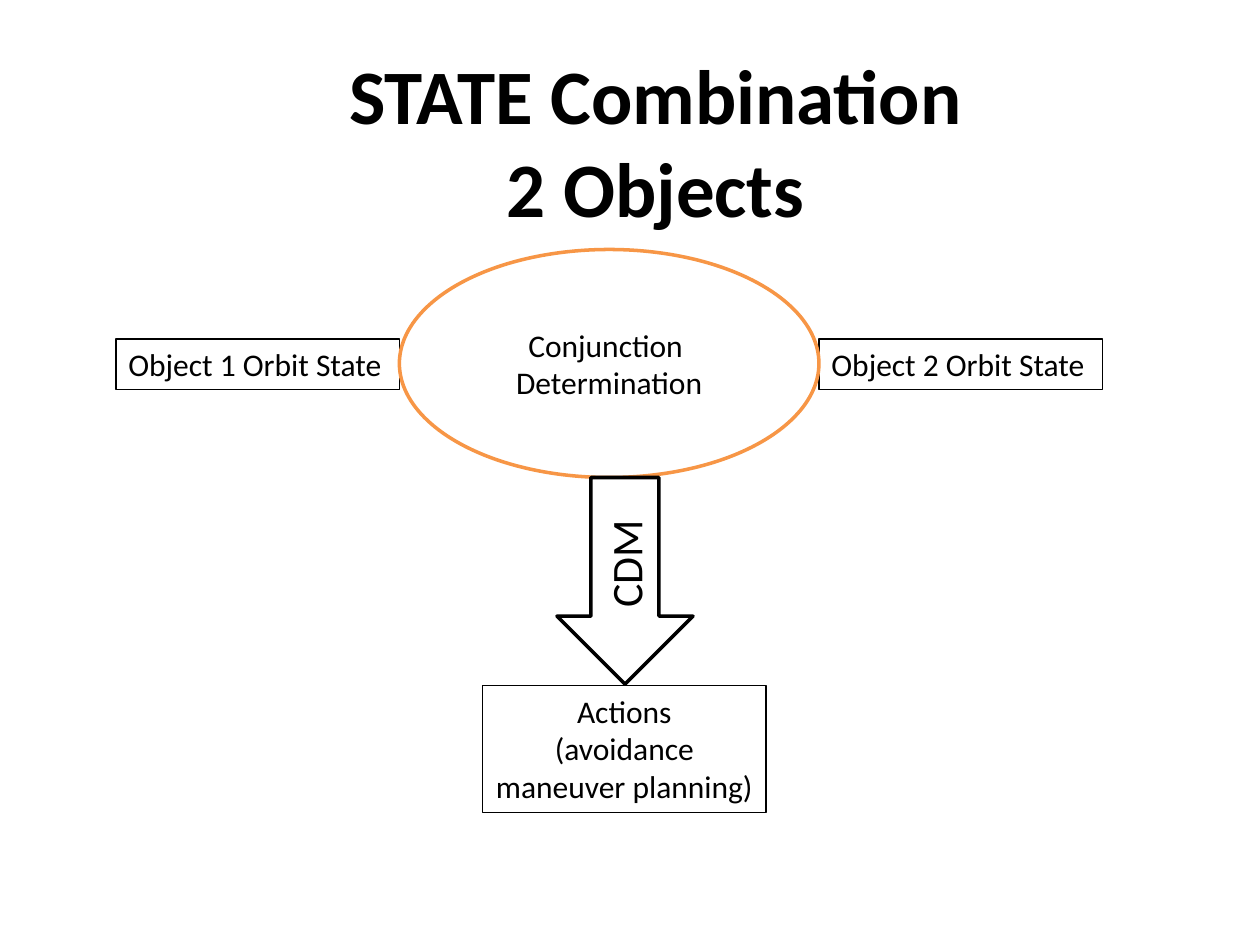
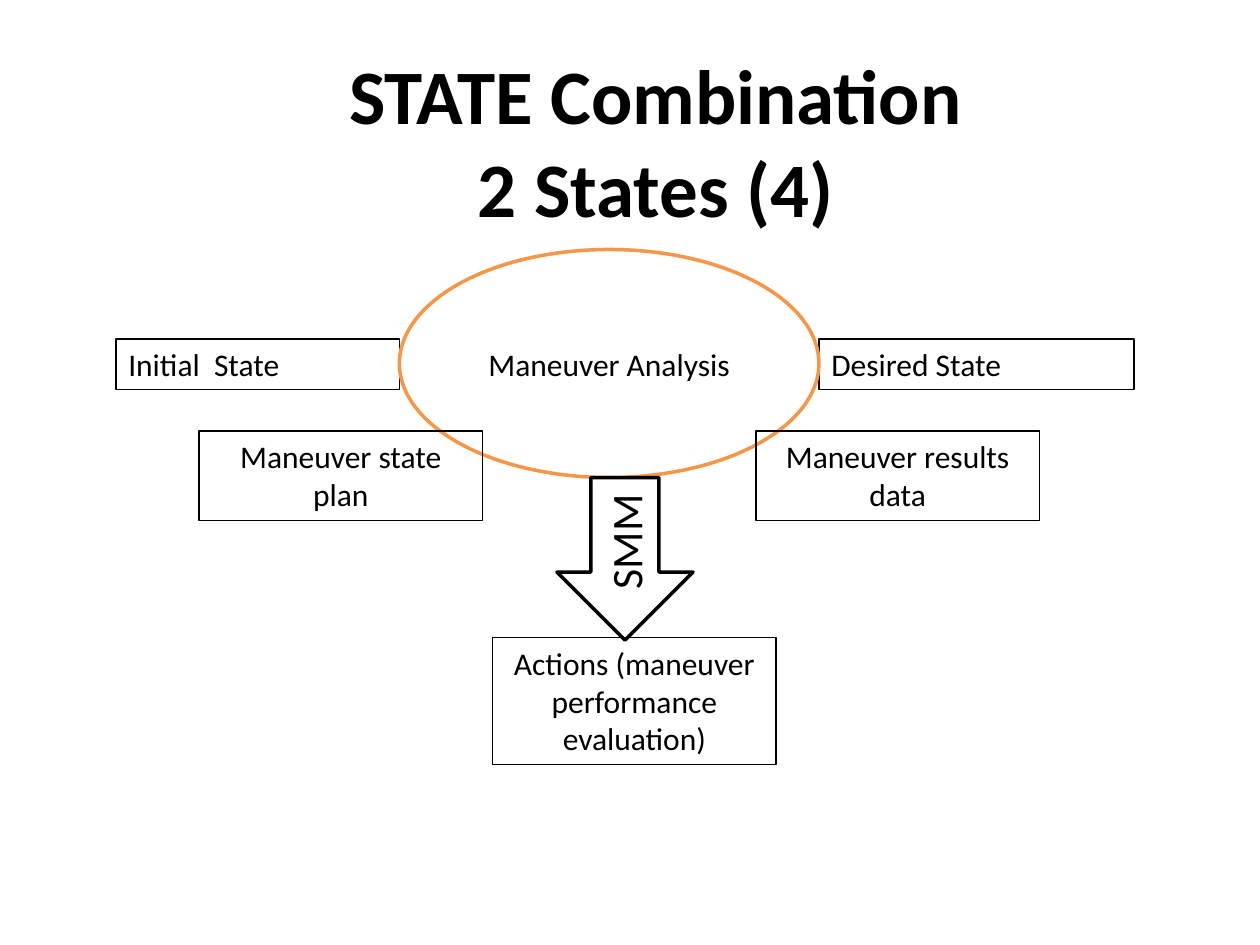
from dataclasses import dataclass

from pptx import Presentation
from pptx.dml.color import RGBColor
from pptx.enum.shapes import MSO_SHAPE
from pptx.enum.text import MSO_ANCHOR, MSO_AUTO_SIZE, PP_ALIGN
from pptx.util import Inches, Pt

RECT, OVAL, ARROW = MSO_SHAPE.RECTANGLE, MSO_SHAPE.OVAL, MSO_SHAPE.DOWN_ARROW
LEFT, CENTER = PP_ALIGN.LEFT, PP_ALIGN.CENTER
TOP, MIDDLE = MSO_ANCHOR.TOP, MSO_ANCHOR.MIDDLE
GROW, FIXED = MSO_AUTO_SIZE.SHAPE_TO_FIT_TEXT, MSO_AUTO_SIZE.NONE


@dataclass(frozen=True)
class Theme:
    font: str = "Calibri"
    ink: RGBColor = RGBColor(0, 0, 0)
    paper: RGBColor = RGBColor(255, 255, 255)
    accent: RGBColor = RGBColor(0xF7, 0x96, 0x46)
    title_size: int = 44
    body_size: int = 18
    arrow_size: int = 25
    thin: float = 0.75
    thick: float = 2


THEME = Theme()

TITLE_AT = (2.33, 0.33, 5.75, 1.58)
OVAL_X, OVAL_Y, OVAL_W, OVAL_H = 3.17, 1.98, 3.33, 1.81
OVAL_RIGHT, OVAL_BOTTOM = OVAL_X + OVAL_W, OVAL_Y + OVAL_H
ARROW_X, ARROW_W = 4.42, 1.08
BOX_W = 2.25
STATE_Y, STATE_H = 2.69, 0.4
DATA_Y, DATA_H = 3.42, 0.71
ACTION_H = 1.01


@dataclass(frozen=True)
class Box:
    text: str
    x: float
    y: float
    h: float
    w: float = BOX_W
    align: PP_ALIGN = CENTER


@dataclass(frozen=True)
class Combination:
    title: str
    process: str
    message: str
    arrow_h: float
    states: tuple[Box, ...]
    results: tuple[Box, ...]


def state_pair(first: str, second: str, second_w: float = BOX_W) -> tuple[Box, Box]:
    """Input states that touch the left and right ends of the process oval."""
    return (Box(first, OVAL_X - BOX_W, STATE_Y, STATE_H, align=LEFT),
            Box(second, OVAL_RIGHT, STATE_Y, STATE_H, second_w, LEFT))


COMBINATIONS = (
    Combination(
        "STATE Combination\v2 Objects", "Conjunction  Determination", "CDM", 1.64,
        state_pair("Object 1 Orbit State", "Object 2 Orbit State"),
        (Box("Actions\n(avoidance maneuver planning)", 3.83, 5.44, ACTION_H),)),
    Combination(
        "STATE Combination\v2 States (4)", "Maneuver Analysis", "SMM", 1.29,
        state_pair("Initial  State", "Desired State", 2.5),
        (Box("Actions (maneuver performance evaluation)", 3.91, 5.06, ACTION_H),
         Box("Maneuver state plan", 1.58, DATA_Y, DATA_H),
         Box("Maneuver results data", 6, DATA_Y, DATA_H))),
)


def set_all(target, **values) -> None:
    for name, value in values.items():
        setattr(target, name, value)


def write(sp, text: str, size: int, align=CENTER, bold=False, **frame) -> None:
    tf = sp.text_frame
    tf.text = text
    set_all(tf, **{"word_wrap": True, "auto_size": GROW, "vertical_anchor": TOP, **frame})
    for p in tf.paragraphs:
        p.alignment = align
        for r in p.runs:
            set_all(r.font, name=THEME.font, size=Pt(size), bold=bold)
            r.font.color.rgb = THEME.ink


def add_outline(s, kind, at, color=THEME.ink, width=THEME.thin):
    sp = s.shapes.add_shape(kind, *map(Inches, at))
    sp.shadow.inherit = False
    sp.fill.background()
    sp.line.color.rgb = color
    sp.line.width = Pt(width)
    return sp


def add_boxes(s, boxes: tuple[Box, ...]) -> None:
    for box in boxes:
        sp = add_outline(s, RECT, (box.x, box.y, box.w, box.h))
        write(sp, box.text, THEME.body_size, box.align)


def add_title(s, text: str) -> None:
    sp = s.shapes.title
    set_all(sp, **dict(zip(("left", "top", "width", "height"), map(Inches, TITLE_AT))))
    write(sp, text, THEME.title_size, bold=True)


def add_process(s, text: str) -> None:
    sp = add_outline(s, OVAL, (OVAL_X, OVAL_Y, OVAL_W, OVAL_H), THEME.accent, THEME.thick)
    write(sp, text, THEME.body_size, auto_size=FIXED, vertical_anchor=MIDDLE,
          margin_left=0, margin_top=0, margin_right=0, margin_bottom=0)


def add_message_arrow(s, text: str, height: float) -> None:
    sp = add_outline(s, ARROW, (ARROW_X, OVAL_BOTTOM, ARROW_W, height), width=THEME.thick)
    sp.fill.solid()
    sp.fill.fore_color.rgb = THEME.paper
    write(sp, text, THEME.arrow_size, auto_size=FIXED, vertical_anchor=MIDDLE)
    sp.text_frame._txBody.bodyPr.set("vert", "vert270")


def main() -> None:
    prs = Presentation()
    prs.slide_width, prs.slide_height = Inches(10), Inches(7.5)
    title_only = prs.slide_layouts[5]
    for item in COMBINATIONS:
        s = prs.slides.add_slide(title_only)
        add_title(s, item.title)
        add_boxes(s, item.states)
        add_process(s, item.process)
        add_message_arrow(s, item.message, item.arrow_h)
        add_boxes(s, item.results)
    prs.save("out.pptx")


if __name__ == "__main__":
    main()
